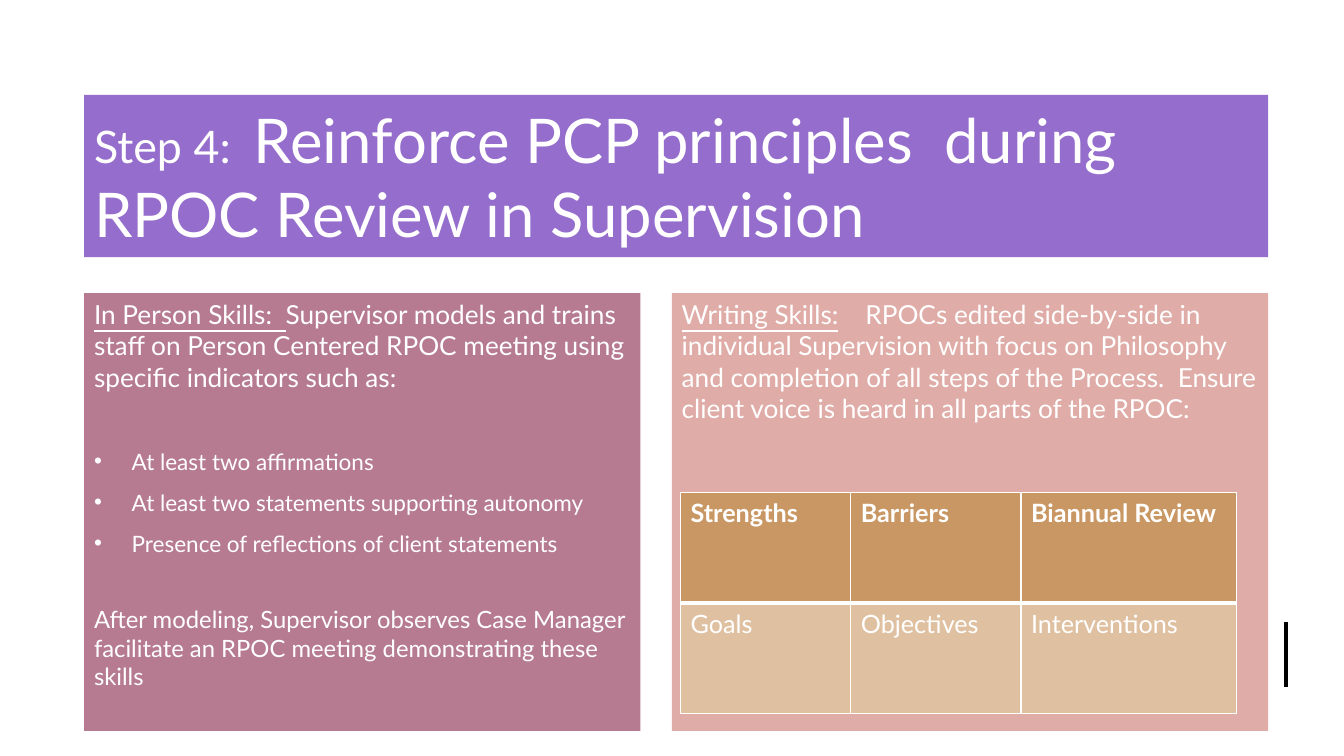
from lxml import etree
from pptx import Presentation
from pptx.dml.color import RGBColor
from pptx.enum.shapes import MSO_CONNECTOR, MSO_SHAPE
from pptx.enum.text import MSO_ANCHOR, PP_ALIGN
from pptx.oxml.ns import qn
from pptx.util import Cm, Pt

STRAIGHT = MSO_CONNECTOR.STRAIGHT
RECTANGLE = MSO_SHAPE.RECTANGLE
TOP, MIDDLE = MSO_ANCHOR.TOP, MSO_ANCHOR.MIDDLE
LEFT = PP_ALIGN.LEFT

FONT = "Lato"
COLORS = {
    "white": "FFFFFF", "black": "000000", "title": "956DCC",
    "in_person": "B67B90", "writing": "E0ACA7",
    "header": "C99763", "body": "DFC1A1",
}
BODY_SIZE, BULLET_SIZE, CLOSING_SIZE = 18.7, 16.1, 17
SPACE_BEFORE = 10
MARGIN, PANEL_TOP, PANEL_HEIGHT = 2.12, 7.39, 11.03

SKILLS = [
    "At least two affirmations",
    "At least two statements supporting autonomy",
    "Presence of reflections of client statements",
]
REVIEW_PARTS = [
    ["Strengths", "Barriers", "Biannual Review"],
    ["Goals", "Objectives", "Interventions"],
]


def color(name):
    return RGBColor.from_string(COLORS[name])


def style_span(span, size, bold=False, underline=False):
    font = span.font
    font.name, font.size = FONT, Pt(size)
    font.bold, font.underline = bold, underline
    font.color.rgb = color("white")


def add_panel(page, left, top, width, height, fill, anchor=TOP):
    box = page.shapes.add_shape(RECTANGLE, Cm(left), Cm(top), Cm(width), Cm(height))
    box.shadow.inherit = False
    box.fill.solid()
    box.fill.fore_color.rgb = color(fill)
    box.line.fill.background()
    box.text_frame.word_wrap = True
    box.text_frame.vertical_anchor = anchor
    return box


def write_para(para, spans, before=SPACE_BEFORE):
    """Write (text, size, underline) spans into a paragraph."""
    para.alignment = LEFT
    para.space_before = Pt(before)
    for text, size, underline in spans:
        span = para.add_run()
        span.text = text
        style_span(span, size, underline=underline)


def add_bullet(para):
    properties = para._p.get_or_add_pPr()
    indent = Cm(0.95)
    properties.set("marL", str(indent))
    properties.set("indent", str(-indent))
    etree.SubElement(properties, qn("a:buFont"), typeface="Arial")
    etree.SubElement(properties, qn("a:buChar"), char="•")


def add_tab_stop(para, position):
    stops = etree.SubElement(para._p.get_or_add_pPr(), qn("a:tabLst"))
    etree.SubElement(stops, qn("a:tab"), pos=str(Cm(position)), algn="l")


def set_borders(cell, widths):
    properties = cell._tc.get_or_add_tcPr()
    for side, width in widths.items():
        line = etree.SubElement(properties, qn(f"a:ln{side}"), w=str(Pt(width)))
        fill = etree.SubElement(line, qn("a:solidFill"))
        etree.SubElement(fill, qn("a:srgbClr"), val=COLORS["white"])


def add_title(page):
    box = add_panel(page, MARGIN, 2.39, 29.84, 4.09, "title", MIDDLE)
    write_para(box.text_frame.paragraphs[0], [
        ("Step 4:  ", 32, False),
        ("Reinforce PCP principles  during RPOC Review in Supervision", 44, False),
    ], before=0)


def add_in_person_panel(page):
    box = add_panel(page, MARGIN, PANEL_TOP, 14.02, PANEL_HEIGHT, "in_person")
    frame = box.text_frame
    write_para(frame.paragraphs[0], [
        ("In Person Skills:  ", BODY_SIZE, True),
        ("Supervisor models and trains staff on Person Centered RPOC meeting "
         "using specific indicators such as:", BODY_SIZE, False),
    ])
    for index, skill in enumerate(SKILLS):
        para = frame.add_paragraph()
        write_para(para, [(skill, BULLET_SIZE, False)],
                   before=SPACE_BEFORE if index else 39.3)
        add_bullet(para)
    write_para(frame.add_paragraph(), [
        ("After modeling, Supervisor observes Case Manager facilitate an RPOC "
         "meeting demonstrating these skills", CLOSING_SIZE, False),
    ], before=34.3)


def add_writing_panel(page):
    box = add_panel(page, 16.93, PANEL_TOP, 15.03, PANEL_HEIGHT, "writing")
    para = box.text_frame.paragraphs[0]
    write_para(para, [
        ("Writing Skills:", BODY_SIZE, True),
        ("\tRPOCs edited side-by-side in individual Supervision with focus on "
         "Philosophy and completion of all steps of the Process.  Ensure client "
         "voice is heard in all parts of the RPOC:", BODY_SIZE, False),
    ])
    add_tab_stop(para, 4.63)


def add_review_table(page):
    widths, row_height = [4.29, 4.29, 5.44], 2.78
    table = page.shapes.add_table(
        len(REVIEW_PARTS), len(widths), Cm(17.15), Cm(12.42),
        Cm(sum(widths)), Cm(row_height * len(REVIEW_PARTS))).table
    for column, width in zip(table.columns, widths):
        column.width = Cm(width)
    for row, labels in enumerate(REVIEW_PARTS):
        is_header = row == 0
        table.rows[row].height = Cm(row_height)
        for column, label in enumerate(labels):
            cell = table.cell(row, column)
            set_borders(cell, {"L": 1, "R": 1, "T": 1 if is_header else 3,
                               "B": 3 if is_header else 1})
            cell.fill.solid()
            cell.fill.fore_color.rgb = color("header" if is_header else "body")
            cell.text_frame.text = label
            style_span(cell.text_frame.paragraphs[0].runs[0], 18, bold=is_header)


def add_side_mark(page):
    mark = page.shapes.add_connector(
        STRAIGHT, Cm(32.41), Cm(15.67), Cm(32.41), Cm(17.32))
    mark.line.color.rgb = color("black")
    mark.line.width = Pt(3)
    etree.SubElement(mark._element.spPr, qn("a:effectLst"))


def main():
    deck = Presentation()
    deck.slide_width, deck.slide_height = Cm(33.87), Cm(19.05)
    page = deck.slides.add_slide(deck.slide_layouts[6])

    # Side mark and heading
    add_side_mark(page)
    add_title(page)

    # The two skill panels
    add_in_person_panel(page)
    add_writing_panel(page)

    # Parts of the review
    add_review_table(page)

    deck.save("out.pptx")


if __name__ == "__main__":
    main()
